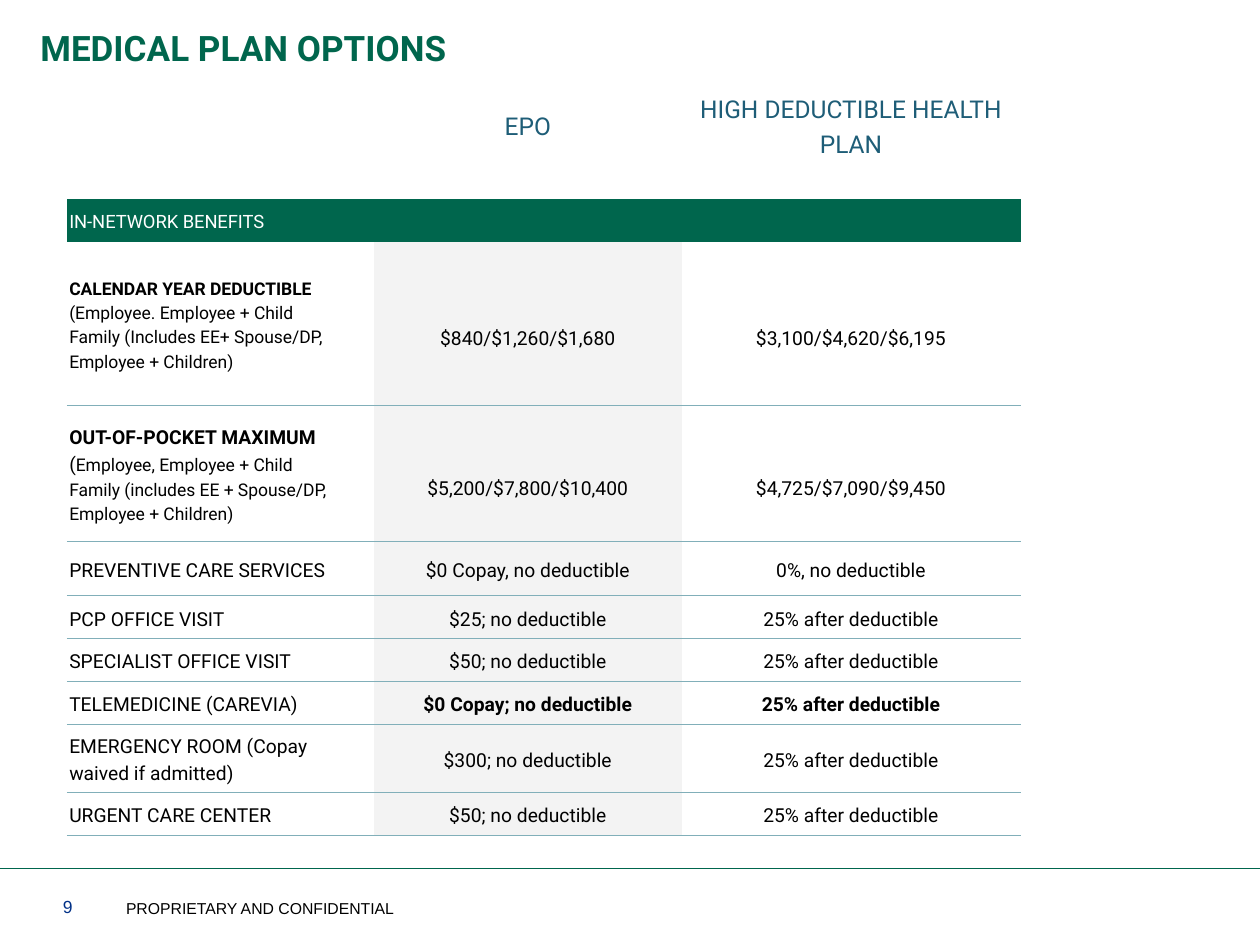
from dataclasses import dataclass
from lxml.etree import SubElement
from pptx import Presentation
from pptx.dml.color import RGBColor
from pptx.enum.shapes import MSO_CONNECTOR
from pptx.enum.text import MSO_ANCHOR, PP_ALIGN
from pptx.oxml.ns import qn
from pptx.slide import Slide
from pptx.util import Inches, Pt

GREEN = RGBColor(0x00, 0x66, 0x4D)
NAVY = RGBColor(0x00, 0x30, 0x87)
TEAL = RGBColor(0x1E, 0x5D, 0x77)
RULE = RGBColor(0x81, 0xAF, 0xB9)
SHADE = RGBColor(0xF3, 0xF3, 0xF3)
WHITE = RGBColor(0xFF, 0xFF, 0xFF)
BLACK = RGBColor(0x00, 0x00, 0x00)

COLUMNS, ROWS = 100, 75
COLUMN_WIDTHS = [24.4, 24.4, 26.9]
ROW_HEIGHTS = [9.7, 3.4, 13, 10.8, 4.3, 3.4, 3.4, 3.4, 5.4, 3.4]
COLUMN_FILLS = [None, SHADE, WHITE]
HEADERS = ["EPO", "HIGH DEDUCTIBLE HEALTH PLAN"]
AFTER = "25% after deductible"
DEDUCTIBLE = [
    [("CALENDAR YEAR DEDUCTIBLE", 10, True)],
    [("(Employee. Employee + Child", 10, False)],
    [("Family (Includes EE+ Spouse/DP, Employee + Children)", 10, False)],
]
MAXIMUM = [
    [("OUT-OF-POCKET MAXIMUM", 11, True)],
    [("(", 11, False), ("Employee, Employee + Child", 10, False)],
    [("Family (includes EE + Spouse/DP, Employee + Children)", 10, False)],
]
AMOUNTS = [
    (DEDUCTIBLE, "$840/$1,260/$1,680", "$3,100/$4,620/$6,195"),
    (MAXIMUM, "$5,200/$7,800/$10,400", "$4,725/$7,090/$9,450"),
]
SERVICES = [
    ("PREVENTIVE CARE SERVICES", "$0 Copay, no deductible", "0%, no deductible", False),
    ("PCP OFFICE VISIT", "$25; no deductible", AFTER, False),
    ("SPECIALIST OFFICE VISIT", "$50; no deductible", AFTER, False),
    ("TELEMEDICINE (CAREVIA)", "$0 Copay; no deductible", AFTER, True),
    ("EMERGENCY ROOM (Copay waived if admitted)", "$300; no deductible", AFTER, False),
    ("URGENT CARE CENTER", "$50; no deductible", AFTER, False),
]


@dataclass
class PlanPage:
    """Draws styled elements on one slide, measured in grid columns and rows."""

    slide: Slide
    width: int
    height: int
    font: str = "Roboto"
    footer_font: str = "Arial"
    spacing: float = 1.19
    blank_line: float = 2.1

    def across(self, columns):
        return round(self.width * columns / COLUMNS)

    def down(self, rows):
        return round(self.height * rows / ROWS)

    def add_span(self, para, text, size, color, bold=False, font=None):
        span = para.add_run()
        span.text = text
        span.font.name = font or self.font
        span.font.size = Pt(size)
        span.font.bold = bold
        span.font.color.rgb = color

    def text(self, left, top, width, height, words, size, color, bold=False,
             font=None, anchor=MSO_ANCHOR.TOP):
        box = self.slide.shapes.add_textbox(
            self.across(left), self.down(top), self.across(width), self.down(height))
        frame = box.text_frame
        frame.word_wrap = True
        frame.vertical_anchor = anchor
        frame.margin_left = frame.margin_right = 0
        self.add_span(frame.paragraphs[0], words, size, color, bold, font)

    def footer(self, left, width, words, size, color):
        self.text(left, 70.8, width, 2.5, words, size, color,
                  font=self.footer_font, anchor=MSO_ANCHOR.BOTTOM)

    def rule(self, row, color):
        line = self.slide.shapes.add_connector(
            MSO_CONNECTOR.STRAIGHT, 0, self.down(row), self.width, self.down(row))
        line.line.color.rgb = color
        line.line.width = Pt(0.5)
        SubElement(line._element.spPr, qn("a:effectLst"))

    def table(self, left, top, widths, heights):
        frame = self.slide.shapes.add_table(
            len(heights), len(widths), self.across(left), self.down(top),
            self.across(sum(widths)), self.down(sum(heights)))
        table = frame.table
        table.first_row = table.horz_banding = False
        for column, width in zip(table.columns, widths):
            column.width = self.across(width)
        for row, height in zip(table.rows, heights):
            row.height = self.down(height)
        return table

    def cell_style(self, cell, fill, ruled_top, ruled_bottom):
        cell.vertical_anchor = MSO_ANCHOR.MIDDLE
        cell.margin_left = cell.margin_right = Inches(0.02)
        cell.margin_top = cell.margin_bottom = 0
        properties = cell._tc.get_or_add_tcPr()
        edges = {"a:lnL": False, "a:lnR": False, "a:lnT": ruled_top, "a:lnB": ruled_bottom}
        for tag, ruled in edges.items():
            edge = SubElement(properties, qn(tag), w=str(Pt(0.5)))
            if ruled:
                paint = SubElement(edge, qn("a:solidFill"))
                SubElement(paint, qn("a:srgbClr"), val=str(RULE))
            else:
                SubElement(edge, qn("a:noFill"))
        if fill is None:
            cell.fill.background()
        else:
            cell.fill.solid()
            cell.fill.fore_color.rgb = fill

    def cell_text(self, cell, lines, color=BLACK, align=PP_ALIGN.LEFT):
        frame = cell.text_frame
        for index, spans in enumerate(lines):
            para = frame.add_paragraph() if index else frame.paragraphs[0]
            para.alignment = align
            para.line_spacing = self.spacing
            for words, size, bold in spans:
                self.add_span(para, words, size, color, bold)

    def benefits(self, left, top):
        table = self.table(left, top, COLUMN_WIDTHS, ROW_HEIGHTS)
        for row in range(len(ROW_HEIGHTS)):
            for column, shade in enumerate(COLUMN_FILLS):
                fill = [None, GREEN][row] if row < 2 else shade
                self.cell_style(table.cell(row, column), fill, row > 2, row > 1)
        for column, words in enumerate(HEADERS, 1):
            cell = table.cell(0, column)
            cell.margin_bottom = self.down(self.blank_line)
            self.cell_text(cell, [[(words, 14, False)]], TEAL, PP_ALIGN.CENTER)
        self.cell_text(table.cell(1, 0), [[("IN-NETWORK BENEFITS", 10.5, False)]], WHITE)
        for row, (lines, *values) in enumerate(AMOUNTS, 2):
            table.cell(row, 0).margin_right = 0
            self.cell_text(table.cell(row, 0), lines)
            for column, value in enumerate(values, 1):
                cell = table.cell(row, column)
                cell.margin_top = self.down(self.blank_line)
                self.cell_text(cell, [[(value, 11, False)]], align=PP_ALIGN.CENTER)
        for row, (label, *values, bold) in enumerate(SERVICES, 4):
            self.cell_text(table.cell(row, 0), [[(label, 11, False)]])
            for column, value in enumerate(values, 1):
                self.cell_text(table.cell(row, column), [[(value, 11, bold)]],
                               align=PP_ALIGN.CENTER)


def main():
    deck = Presentation()
    deck.slide_width, deck.slide_height = Inches(10), Inches(7.5)
    slide = deck.slides.add_slide(deck.slide_layouts[6])
    page = PlanPage(slide, deck.slide_width, deck.slide_height)
    page.rule(68.9, GREEN)
    page.footer(5, 5.4, "9", 10, NAVY)
    page.footer(10, 23.5, "PROPRIETARY AND CONFIDENTIAL", 9, BLACK)
    page.text(3.2, 1.6, 89.2, 10.8, "MEDICAL PLAN OPTIONS", 20, GREEN, bold=True)
    page.benefits(5.3, 6.1)
    deck.save("out.pptx")


if __name__ == "__main__":
    main()
